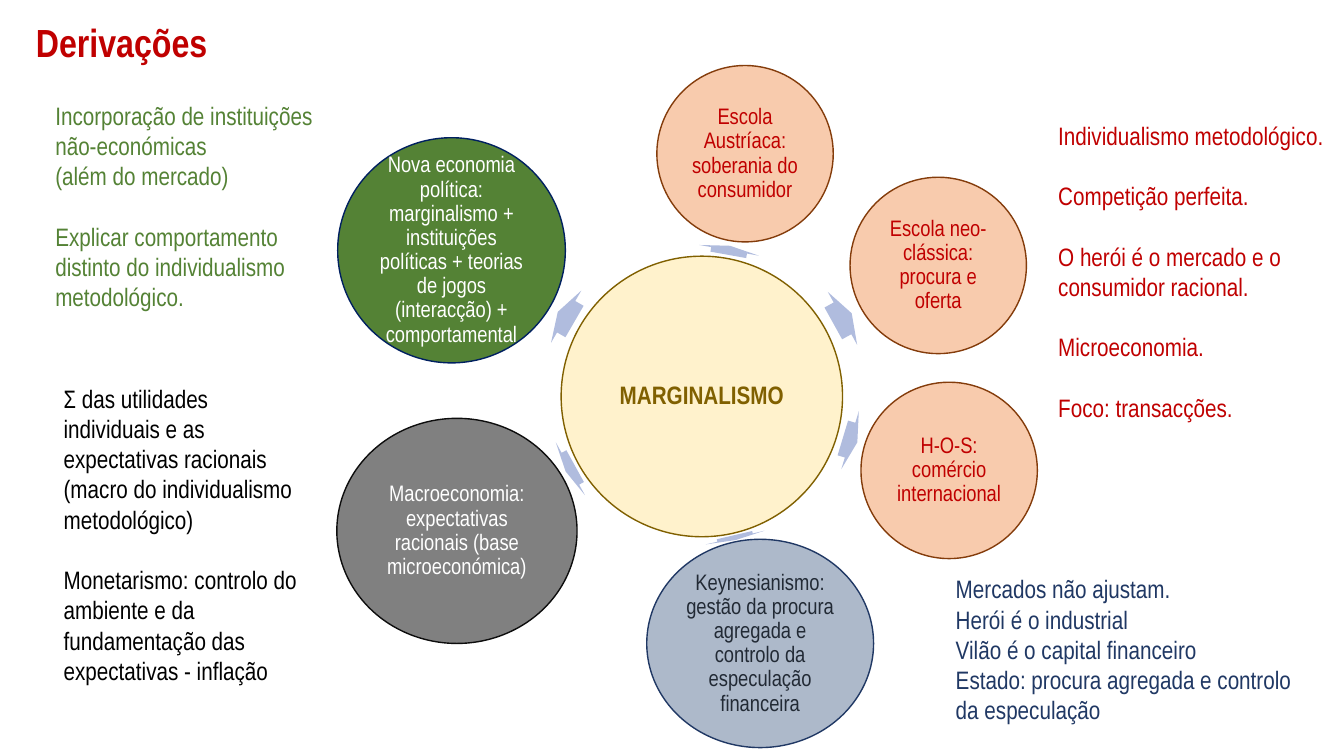
"""Build the slide of schools of thought derived from marginalism."""
import pptx
import pptx.util
import pptx.dml.color
import pptx.enum.shapes
import pptx.enum.text

THEME = {
    "font": "Arial Narrow",
    "title_size": 28, "body_size": 18, "bubble_size": 16, "note_gap": 21.6,
    "red": "C00000", "green": "548235", "navy": "203864", "black": "000000",
    "white": "FFFFFF", "gold": "806000", "cream": "FFF2CC", "peach": "F8CBAD",
    "brown": "843C0B", "steel": "ADB9CA", "slate": "222A35", "grey": "808080",
    "charcoal": "0D0D0D", "midnight": "002060", "lavender": "B0BCDE",
}

deck = pptx.Presentation()
deck.slide_width = pptx.util.Inches(13.33)
deck.slide_height = pptx.util.Inches(7.5)
page = deck.slides.add_slide(deck.slide_layouts[6])
COLUMN, ROW = deck.slide_width / 16, deck.slide_height / 9


def color(name):
    return pptx.dml.color.RGBColor.from_string(THEME[name])


def style(para, size, ink, bold=False):
    for span in para.runs:
        span.font.name = THEME["font"]
        span.font.size = pptx.util.Pt(THEME[size])
        span.font.color.rgb = color(ink)
        span.font.bold = bold


title = page.shapes.add_textbox(
    int(0.31 * COLUMN), int(0.19 * ROW), int(15.31 * COLUMN), int(0.68 * ROW))
title.text_frame.word_wrap = True
title.text_frame.vertical_anchor = pptx.enum.text.MSO_ANCHOR.MIDDLE
title.text_frame.text = "Derivações"
title.text_frame.paragraphs[0].line_spacing = 0.9
style(title.text_frame.paragraphs[0], "title_size", "red", True)

bubbles = [
    ("MARGINALISMO", 6.68, 3.05, 3.35, 3.34, "cream", "gold", "gold", None),
    ("Escola Austríaca: soberania do consumidor",
     7.82, 0.78, 2.1, 2.1, "peach", "brown", "red", (8.68, 2.98, 0.11, 280.2)),
    ("Escola neo-clássica: procura e oferta",
     10.12, 2.11, 2.1, 2.1, "peach", "brown", "red", (10.03, 3.79, 0.25, 331)),
    ("H-O-S: comércio internacional",
     10.25, 4.55, 2.1, 2.1, "peach", "brown", "red", (10.12, 5.24, 0.18, 16.8)),
    ("Keynesianismo: gestão da procura agregada e controlo da especulação financeira",
     7.7, 6.42, 2.7, 2.48, "steel", "navy", "slate", (8.75, 6.4, 0.06, 76.9)),
    ("Macroeconomia: expectativas racionais (base microeconómica)",
     4.01, 4.98, 2.86, 2.68, "grey", "charcoal", "white", (6.79, 5.58, 0.13, 151.1)),
    ("Nova economia política: marginalismo + instituições políticas + "
     "teorias de jogos (interacção) + comportamental",
     4.02, 1.64, 2.71, 2.68, "green", "midnight", "white", (6.74, 3.77, 0.23, 210.1)),
]
ARROW_HEIGHT = 0.72

for text, left, top, width, height, fill, outline, ink, pointer in bubbles:
    if pointer:
        center_x, center_y, length, angle = pointer
        arrow = page.shapes.add_shape(
            pptx.enum.shapes.MSO_SHAPE.RIGHT_ARROW,
            int((center_x - length / 2) * COLUMN), int((center_y - ARROW_HEIGHT / 2) * ROW),
            int(length * COLUMN), int(ARROW_HEIGHT * ROW))
        arrow.adjustments[0] = 0.6
        arrow.adjustments[1] = 0.5
        arrow.rotation = angle
        arrow.shadow.inherit = False
        arrow.fill.solid()
        arrow.fill.fore_color.rgb = color("lavender")
        arrow.line.fill.background()

    bubble = page.shapes.add_shape(
        pptx.enum.shapes.MSO_SHAPE.OVAL,
        int(left * COLUMN), int(top * ROW), int(width * COLUMN), int(height * ROW))
    bubble.shadow.inherit = False
    bubble.fill.solid()
    bubble.fill.fore_color.rgb = color(fill)
    bubble.line.color.rgb = color(outline)
    bubble.line.width = pptx.util.Pt(1)
    frame = bubble.text_frame
    frame.word_wrap = True
    frame.vertical_anchor = pptx.enum.text.MSO_ANCHOR.MIDDLE
    frame.margin_left = frame.margin_right = pptx.util.Inches(0.02)
    frame.margin_top = frame.margin_bottom = pptx.util.Inches(0.02)
    frame.text = text
    para = frame.paragraphs[0]
    para.alignment = pptx.enum.text.PP_ALIGN.CENTER
    para.line_spacing = 0.9
    is_hub = pointer is None
    style(para, "body_size" if is_hub else "bubble_size", ink, is_hub)

notes = [
    (12.48, 1.37, 3.43, 3.76, "red", False, [
        ["Individualismo metodológico."],
        ["Competição perfeita."],
        ["O herói é o mercado e o", "consumidor racional."],
        ["Microeconomia."],
        ["Foco: transacções."]]),
    (11.26, 6.77, 4.36, 1.94, "navy", False, [
        ["Mercados não ajustam.", "Herói é o industrial", "Vilão é o capital financeiro",
         "Estado: procura agregada e controlo", "da especulação"]]),
    (0.64, 4.5, 3.12, 3.76, "black", True, [
        ["Σ das utilidades individuais e as expectativas racionais "
         "(macro do individualismo metodológico)"],
        ["Monetarismo: controlo do ambiente e da fundamentação das expectativas - inflação"]]),
    (0.54, 1.13, 3.59, 2.66, "green", True, [
        ["Incorporação de instituições", "não-económicas", "(além do mercado)"],
        ["Explicar comportamento", "distinto do individualismo", "metodológico."]]),
]

for left, top, width, height, ink, wraps, groups in notes:
    box = page.shapes.add_textbox(
        int(left * COLUMN), int(top * ROW), int(width * COLUMN), int(height * ROW))
    frame = box.text_frame
    frame.word_wrap = wraps
    frame.auto_size = pptx.enum.text.MSO_AUTO_SIZE.SHAPE_TO_FIT_TEXT
    frame.text = "\n".join(line for group in groups for line in group)
    paragraphs = iter(frame.paragraphs)
    for group_index, group in enumerate(groups):
        for line_index in range(len(group)):
            para = next(paragraphs)
            style(para, "body_size", ink)
            if group_index and line_index == 0:
                para.space_before = pptx.util.Pt(THEME["note_gap"])

deck.save("out.pptx")
